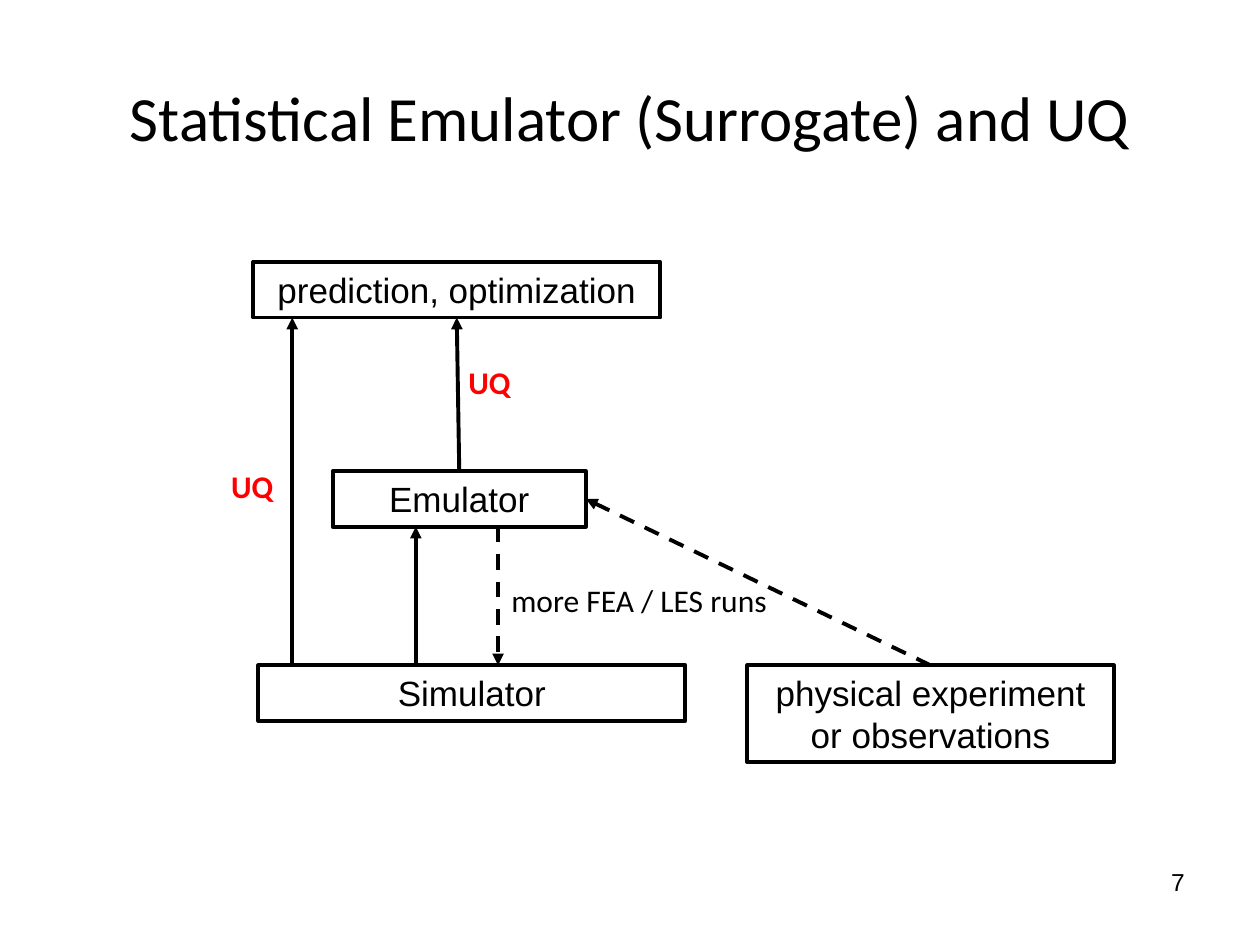
from dataclasses import dataclass

from lxml import etree
from pptx import Presentation
from pptx.dml.color import RGBColor
from pptx.enum.dml import MSO_LINE
from pptx.enum.shapes import MSO_CONNECTOR, MSO_SHAPE
from pptx.enum.text import MSO_ANCHOR, PP_ALIGN
from pptx.oxml.ns import qn
from pptx.util import Pt

LEFT, CENTER, RIGHT = PP_ALIGN.LEFT, PP_ALIGN.CENTER, PP_ALIGN.RIGHT
TOP, MIDDLE = MSO_ANCHOR.TOP, MSO_ANCHOR.MIDDLE
STRAIGHT, RECTANGLE, DASH = MSO_CONNECTOR.STRAIGHT, MSO_SHAPE.RECTANGLE, MSO_LINE.DASH
TOP_SITE, BOTTOM_SITE, RIGHT_SITE = 0, 2, 3


@dataclass(frozen=True)
class Theme:
    ink: RGBColor = RGBColor(0x00, 0x00, 0x00)
    paper: RGBColor = RGBColor(0xFF, 0xFF, 0xFF)
    accent: RGBColor = RGBColor(0xFF, 0x00, 0x00)
    heading_font: str = "Calibri"
    body_font: str = "Arial"
    title_size: float = 36
    node_size: float = 20
    label_size: float = 18
    number_size: float = 14
    stroke: float = 2.25


THEME = Theme()


def points(*lengths):
    return [Pt(length) for length in lengths]


def write(shape, text, *, size, font=THEME.body_font, color=THEME.ink,
          bold=False, align=LEFT, anchor=TOP):
    frame = shape.text_frame
    frame.text = text
    frame.word_wrap = True
    frame.vertical_anchor = anchor
    for paragraph in frame.paragraphs:
        paragraph.alignment = align
        paragraph.font.size = Pt(size)
        paragraph.font.name = font
        paragraph.font.bold = bold
        paragraph.font.color.rgb = color


def add_title(slide, box, text):
    title = slide.shapes.title
    title.left, title.top, title.width, title.height = points(*box)
    write(title, text, size=THEME.title_size, font=THEME.heading_font,
          align=CENTER, anchor=MIDDLE)


def add_node(slide, box, text):
    node = slide.shapes.add_shape(RECTANGLE, *points(*box))
    node.shadow.inherit = False
    node.fill.solid()
    node.fill.fore_color.rgb = THEME.paper
    node.line.color.rgb = THEME.ink
    node.line.width = Pt(THEME.stroke)
    write(node, text, size=THEME.node_size, align=CENTER)
    return node


def add_label(slide, box, text, **text_format):
    label = slide.shapes.add_textbox(*points(*box))
    write(label, text, **text_format)


def add_arrow(slide, start=(0, 0), end=(0, 0), dashed=False):
    arrow = slide.shapes.add_connector(STRAIGHT, *points(*start, *end))
    arrow.line.color.rgb = THEME.ink
    arrow.line.width = Pt(THEME.stroke)
    if dashed:
        arrow.line.dash_style = DASH
    outline = arrow.line._get_or_add_ln()
    etree.SubElement(outline, qn("a:tailEnd"), type="triangle")
    etree.SubElement(outline.getparent(), qn("a:effectLst"))
    return arrow


def join(slide, source, source_site, target, target_site, **arrow_format):
    """Draw an arrow glued to connection sites of two nodes."""
    arrow = add_arrow(slide, **arrow_format)
    arrow.begin_connect(source, source_site)
    arrow.end_connect(target, target_site)


def add_workflow(slide, box):
    left, top, width, height = box
    node_height = 31.7
    emulator_top, simulator_top = top + 119.5, top + 230.4
    prediction_bottom, emulator_bottom = top + node_height, emulator_top + node_height
    experiment_width = 209.5

    prediction = add_node(slide, (left + 19.7, top, 232.6, node_height),
                          "prediction, optimization")
    emulator = add_node(slide, (left + 65.1, emulator_top, 144.7, node_height), "Emulator")
    add_node(slide, (left + 22.6, simulator_top, 244.1, node_height), "Simulator")
    experiment = add_node(
        slide,
        (left + width - experiment_width, simulator_top,
         experiment_width, top + height - simulator_top),
        "physical experiment\nor observations")

    direct_x, training_x, rerun_x = left + 42, left + 112.6, left + 159.6
    add_arrow(slide, (direct_x, simulator_top), (direct_x, prediction_bottom))
    add_arrow(slide, (training_x, simulator_top), (training_x, emulator_bottom))
    add_arrow(slide, (rerun_x, emulator_bottom), (rerun_x, simulator_top), dashed=True)
    join(slide, experiment, TOP_SITE, emulator, RIGHT_SITE, dashed=True)
    join(slide, emulator, TOP_SITE, prediction, BOTTOM_SITE)

    label_height = 29
    add_label(slide, (left + 160.1, top + 178.5, 177, label_height), "more FEA / LES runs",
              size=THEME.label_size, font=THEME.heading_font)
    for uq_left, uq_top in ((135.6, 54), (0, 113.7)):
        add_label(slide, (left + uq_left, top + uq_top, 48, label_height), "UQ",
                  size=THEME.label_size, font=THEME.heading_font,
                  color=THEME.accent, bold=True)


def main():
    deck = Presentation()
    deck.slide_width, deck.slide_height = points(720, 540)
    slide = deck.slides.add_slide(deck.slide_layouts.get_by_name("Title Only"))
    add_title(slide, (36, 21.6, 648, 90), "Statistical Emulator (Surrogate) and UQ")
    add_workflow(slide, (125, 149.8, 511.5, 285.8))
    add_label(slide, (516, 492, 168, 37.5), "7", size=THEME.number_size, align=RIGHT)
    deck.save("out.pptx")


if __name__ == "__main__":
    main()
